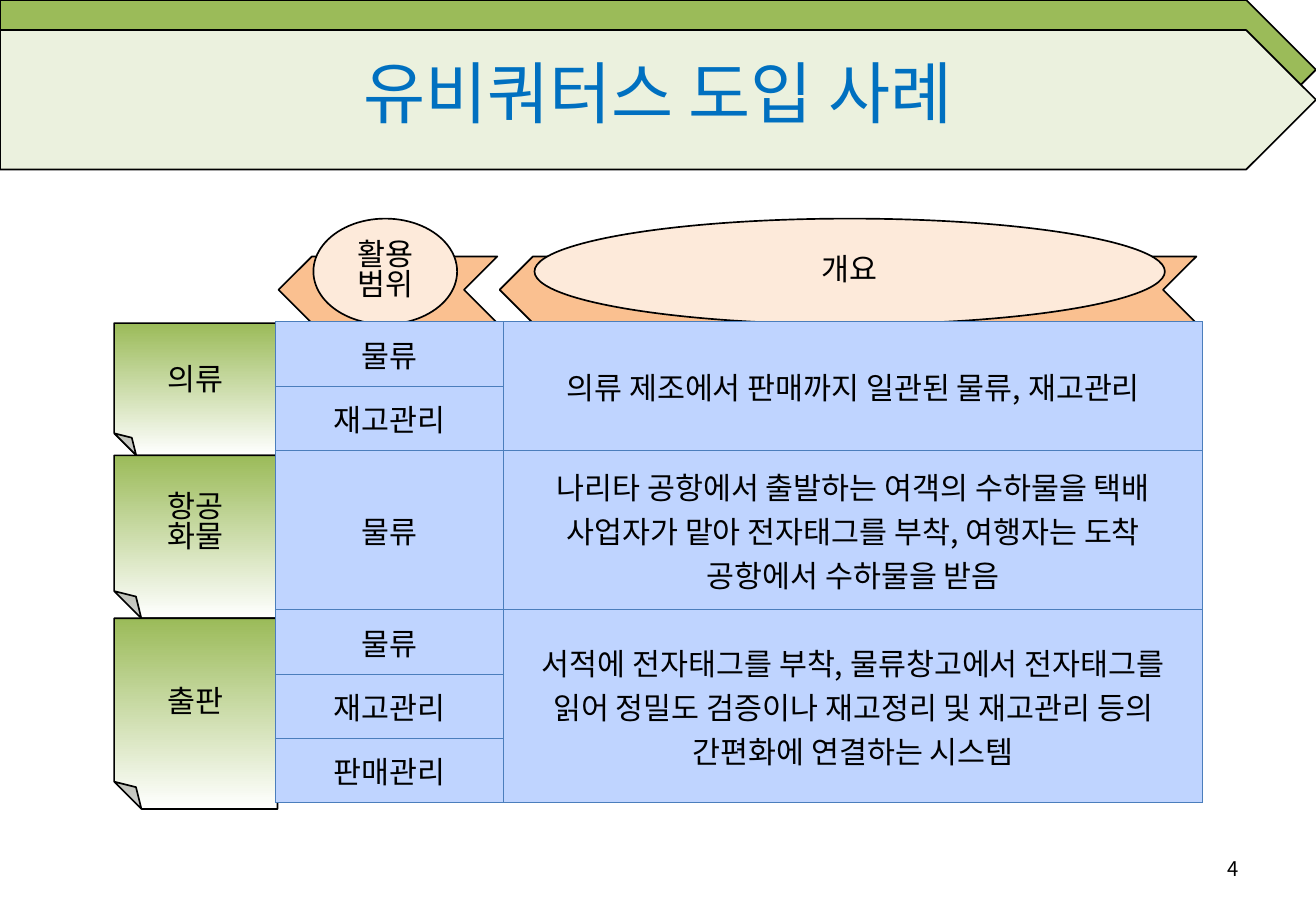
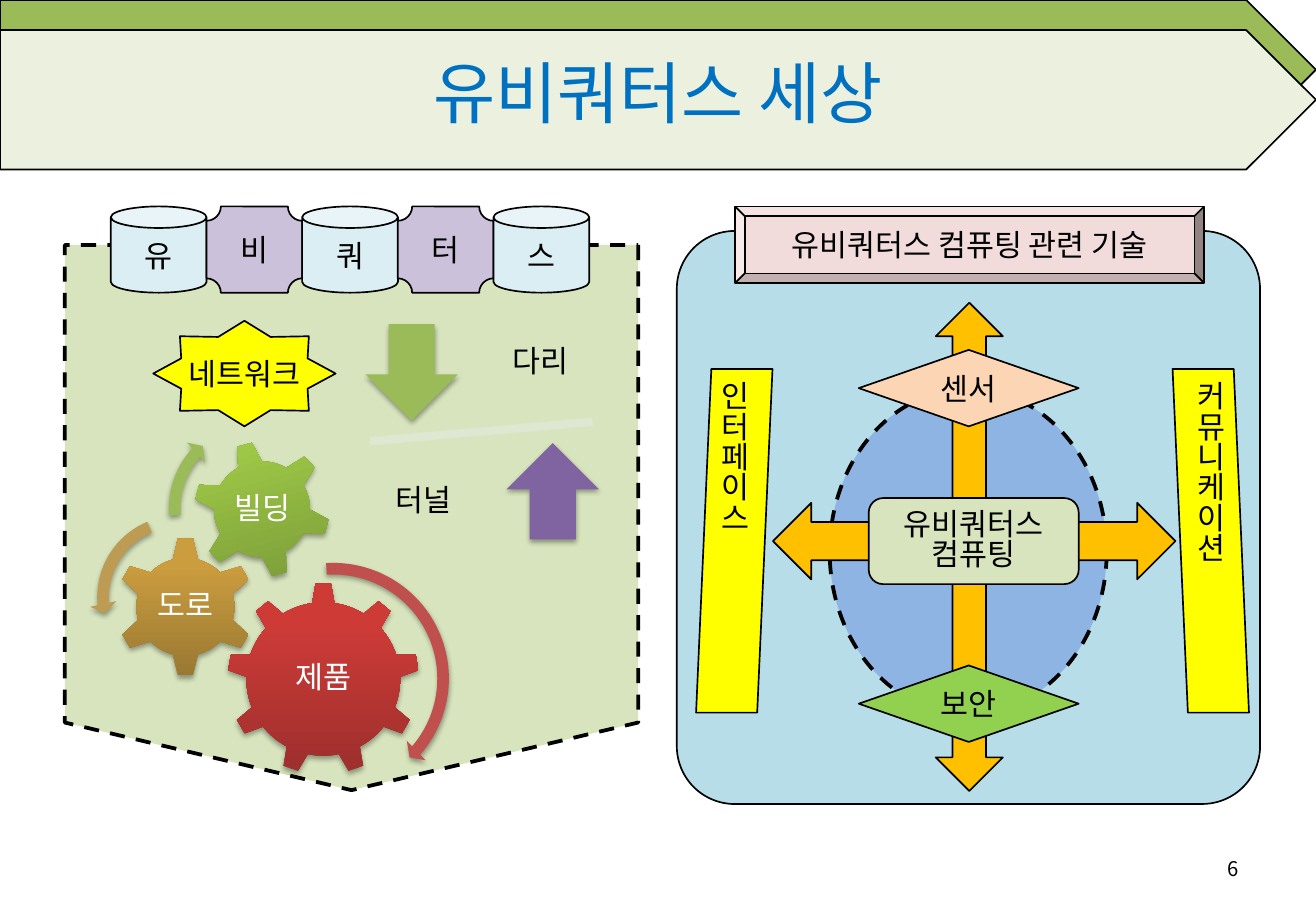
from lxml import etree
from pptx import Presentation
from pptx.dml.color import RGBColor
from pptx.enum.dml import MSO_LINE
from pptx.enum.shapes import MSO_SHAPE as S
from pptx.enum.text import MSO_ANCHOR, PP_ALIGN
from pptx.oxml import parse_xml
from pptx.oxml.ns import qn
from pptx.util import Inches, Pt

PLATE, CHEVRON, OVAL, FOLD = S.PENTAGON, S.CHEVRON, S.OVAL, S.FOLDED_CORNER
CAN, PLAQUE, STAR, MINUS = S.CAN, S.PLAQUE, S.STAR_8_POINT, S.MATH_MINUS
GEAR6, GEAR9 = S.GEAR_6, S.GEAR_9
CURVE, BACK = S.CIRCULAR_ARROW, S.LEFT_CIRCULAR_ARROW
DOWN, UP = S.DOWN_ARROW, S.UP_ARROW
TALL, WIDE = S.UP_DOWN_ARROW, S.LEFT_RIGHT_ARROW
ROUND, BEVEL, SLANT, GEM = S.ROUNDED_RECTANGLE, S.BEVEL, S.FLOWCHART_DATA, S.DIAMOND
DASH = MSO_LINE.DASH
MIDDLE = MSO_ANCHOR.MIDDLE
CENTER, RIGHT = PP_ALIGN.CENTER, PP_ALIGN.RIGHT

FONT = "Noto Sans CJK KR"
WIDTH, HEIGHT = 10.83, 7.5
PAGE = (0, 0, WIDTH, HEIGHT)
TIGHT = 0.82
NS = 'xmlns:a="http://schemas.openxmlformats.org/drawingml/2006/main"'
COLORS = {
    "black": "000000", "white": "FFFFFF", "title": "0070C0",
    "green": "9BBB59", "pale": "EBF1DE", "sage": "D7E4BD",
    "peach": "FAC090", "cream": "FDEADA", "cell": "BFD4FF", "rule": "4B7EBC",
    "ice": "DBEEF4", "lilac": "CCC1DA", "yellow": "FFFF00", "mist": "DEE7D1",
    "red": "C0504D", "tan": "BD9B53", "purple": "8064A2",
    "redlow": "9C2F2D", "redtop": "CE3B37", "tanlow": "997832", "tantop": "CB9D3F",
    "leaflow": "779737", "leaftop": "9DC746", "aqua": "B7DEE8", "rose": "F2DCDB",
    "blue": "8EB4E3", "gold": "FFC000", "skin": "FCD5B5", "lime": "92D050",
}


def rgb(name):
    """Return the named colour."""
    return RGBColor.from_string(COLORS[name])


def place(box, part):
    """Turn percent shares of a box into lengths."""
    x, y, w, h = box
    a, b, c, d = part
    return [Inches(v) for v in (x + w * a / 100, y + h * b / 100,
                                w * c / 100, h * d / 100)]


def write(frame, text, size=18, color="black", align=CENTER, space=None):
    """Fill a text frame, one paragraph a line."""
    frame.vertical_anchor = MIDDLE
    for i, line in enumerate(text.split("\n")):
        para = frame.add_paragraph() if i else frame.paragraphs[0]
        para.alignment = align
        if space:
            para.line_spacing = space
        run = para.add_run()
        run.text = line
        run.font.name, run.font.size = FONT, Pt(size)
        run.font.color.rgb = rgb(color)
        east = etree.SubElement(run.font._element, qn("a:ea"))
        east.set("typeface", FONT)


def label(shapes, box, part, text, wrap=False, **style):
    """Add a text box."""
    item = shapes.add_textbox(*place(box, part))
    item.text_frame.word_wrap = wrap
    write(item.text_frame, text, **style)


def draw(shapes, box, part, kind, fill, text="", line=1, dash=False, adj=(),
         turn=0, flip=False, wrap=False, glow=False, upright=False, space=None):
    """Add a preset shape; a fill pair is (start, end, angle, end position)."""
    item = shapes.add_shape(kind, *place(box, part))
    item.shadow.inherit = False
    item.rotation = turn
    for i, value in enumerate(adj):
        item.adjustments[i] = value
    if isinstance(fill, str):
        item.fill.solid()
        item.fill.fore_color.rgb = rgb(fill)
    else:
        first, last, angle, stop = fill
        item.fill.gradient()
        item.fill.gradient_angle = angle
        for mark, name, at in zip(item.fill.gradient_stops, (first, last), (0, stop)):
            mark.color.rgb, mark.position = rgb(name), at
    if line:
        item.line.color.rgb, item.line.width = rgb("black"), Pt(line)
        if dash:
            item.line.dash_style = DASH
    else:
        item.line.fill.background()
    props = item.element.spPr
    if flip:
        props.xfrm.set("flipH", "1")
    if glow:
        props.find(qn("a:effectLst")).append(parse_xml(
            f'<a:outerShdw {NS} blurRad="{Pt(3.1)}" dist="{Pt(1.8)}" dir="5400000" '
            'rotWithShape="0"><a:srgbClr val="000000"><a:alpha val="35000"/>'
            '</a:srgbClr></a:outerShdw>'))
    if text:
        item.text_frame.word_wrap = wrap
        write(item.text_frame, text, space=space)
        if upright:
            item.text_frame._txBody.bodyPr.set("vert", "eaVert")
    return item


def brand(layout, slide):
    """Give the layout its title place and arrow bands."""
    title = layout.placeholders[0]
    title.left, title.top, title.width, title.height = place(PAGE, (5, 1.7, 90, 16.7))
    for i, (top, fill) in enumerate(((0, "green"), (3.3, "pale"))):
        band = draw(slide.shapes, PAGE, (0, top, 100, 15.3), PLATE, fill).element
        band.nvSpPr.cNvPr.set("id", str(90 + i))
        layout.shapes.element.insert(2 + i, band)


def head(slide, title, number):
    """Write the title and the page number."""
    write(slide.shapes.title.text_frame, title, 40, "title")
    label(slide.shapes, PAGE, (71.7, 92.7, 23.3, 5.3), number, True,
          size=12, align=RIGHT)


def edge(cell):
    """Rule all four sides of a cell."""
    props = cell._tc.get_or_add_tcPr()
    for side in ("lnL", "lnR", "lnT", "lnB"):
        props.append(parse_xml(
            f'<a:{side} {NS} w="{Pt(0.75)}"><a:solidFill>'
            f'<a:srgbClr val="{COLORS["rule"]}"/></a:solidFill></a:{side}>'))


def grid(shapes, box, part, groups):
    """Add the table of uses, one merged summary for each group."""
    count = sum(len(uses) for uses, _ in groups)
    x, y, w, h = place(box, part)
    table = shapes.add_table(count, 2, x, y, w, h).table
    table.first_row = table.horz_banding = False
    for col, width in zip(table.columns, (1.88, 5.75)):
        col.width = Inches(width)
    for row in table.rows:
        row.height = Inches(0.53)
    for cell in table.iter_cells():
        edge(cell)
        cell.fill.solid()
        cell.fill.fore_color.rgb = rgb("cell")
        cell.vertical_anchor = MIDDLE
    top = 0
    for uses, note in groups:
        end = top + len(uses) - 1
        if end > top:
            table.cell(top, 1).merge(table.cell(end, 1))
        else:
            table.rows[top].height = Inches(1.31)
        write(table.cell(top, 1).text_frame, note)
        for i, use in enumerate(uses):
            write(table.cell(top + i, 0).text_frame, use)
        top = end + 1


def cases(shapes, box):
    """Draw the case chart: heads, row tabs and table."""
    for text, x, w, left, width in (("활용범위", 15.1, 20.1, 18.3, 13.2),
                                    ("개요", 35.4, 64, 38.6, 57.9)):
        draw(shapes, box, (x, 6.4, w, 11.3), CHEVRON, "peach", flip=True)
        draw(shapes, box, (left, 0, width, 17.9), OVAL, "cream", text,
             wrap=True, space=TIGHT)
    y = 17.7
    for text, h in (("의류", 22.4), ("항공\n화물", 27.6), ("출판", 32.3)):
        draw(shapes, box, (0, y, 15, h), FOLD, ("green", "white", 270, 1), text,
             flip=True, wrap=True, space=TIGHT if "\n" in text else None)
        y += h
    grid(shapes, box, (14.8, 17.5, 85.2, 81.7), (
        (("물류", "재고관리"), "의류 제조에서 판매까지 일관된 물류, 재고관리"),
        (("물류",), "나리타 공항에서 출발하는 여객의 수하물을 택배 사업자가 맡아 "
                  "전자태그를 부착, 여행자는 도착 공항에서 수하물을 받음"),
        (("물류", "재고관리", "판매관리"),
         "서적에 전자태그를 부착, 물류창고에서 전자태그를 읽어 정밀도 검증이나 "
         "재고정리 및 재고관리 등의 간편화에 연결하는 시스템")))


def gears(shapes, box):
    """Draw the three gears and their turning arrows."""
    for text, kind, tone, turn, part in (
            ("제품", GEAR9, "red", 0, (28.4, 64.6, 33.5, 32.9)),
            ("도로", GEAR6, "tan", 0, (8.9, 56.7, 24.4, 24)),
            ("빌딩", GEAR6, "leaf", 345, (22.5, 40.2, 23.9, 23.5))):
        draw(shapes, box, part, kind, (tone + "low", tone + "top", 90, 0.8),
             line=0, turn=turn, glow=True)
        label(shapes, box, part, text, color="white", space=0.9)
    for kind, fill, part, adj in (
            (CURVE, "red", (25.4, 59.8, 43, 42.3), (0.047, 2.99, 24.617, 159.84, 0.055)),
            (BACK, "tan", (4.4, 51.7, 31.1, 30.6), (0.065, 4.3, 104.891, 148.378, 0.075)),
            (CURVE, "green", (16.9, 35.2, 33.7, 33.1),
             (0.06, 3.941, 133.138, 105.082, 0.07))):
        draw(shapes, box, part, kind, fill, line=0, adj=adj, glow=True)


def scale(shapes, box):
    """Draw the bridge and tunnel balance."""
    draw(shapes, box, (46.2, 35.6, 53, 6), MINUS, "mist", line=0, turn=355)
    for text, kind, fill, x, y, left, top in (
            ("다리", DOWN, "green", 52.5, 20.2, 74.4, 18.1),
            ("터널", UP, "purple", 77.1, 40.6, 54, 41.9)):
        draw(shapes, box, (x, y, 16.1, 16.5), kind, fill, line=0, glow=True)
        label(shapes, box, (left, top, 17.2, 17.3), text, space=0.9)


def world(shapes, box):
    """Draw the left panel."""
    draw(shapes, box, (2.5, 4.2, 95.1, 98.3), PLATE, "sage", line=2.25,
         dash=True, adj=(0.124,), turn=90)
    for i, text in enumerate("유비쿼터스"):
        kind, fill = ((CAN, "ice"), (PLAQUE, "lilac"))[i % 2]
        draw(shapes, box, (8.1 + 16.68 * i, 0, 16.7, 14.8), kind, fill, text)
    gears(shapes, box)
    scale(shapes, box)
    draw(shapes, box, (15.5, 19.6, 31.8, 18.1), STAR, "yellow", "네트워크")


def tech(shapes, box):
    """Draw the right panel."""
    draw(shapes, box, (0, 4.1, 100, 95.9), ROUND, "aqua", adj=(0.101,))
    draw(shapes, box, (10, 0, 80.4, 12.8), BEVEL, "rose", "유비쿼터스 컴퓨팅 관련 기술")
    draw(shapes, box, (26.2, 30.5, 47.5, 54.5), OVAL, "blue", line=2.25, dash=True)
    draw(shapes, box, (44.4, 16.1, 11.5, 81.7), TALL, "gold")
    draw(shapes, box, (16.5, 49.6, 69, 12.8), WIDE, "gold")
    for text, x, flip in (("인터페이스", 3.3, False), ("커뮤니케이션", 85, True)):
        draw(shapes, box, (x, 27.2, 13.1, 57.5), SLANT, "yellow", text,
             flip=flip, upright=True)
    draw(shapes, box, (32.9, 48.8, 36, 14.4), ROUND, "sage", "유비쿼터스\n컴퓨팅",
         space=TIGHT)
    for text, y, fill in (("센서", 24, "skin"), ("보안", 76.8, "lime")):
        draw(shapes, box, (31.2, y, 37.7, 12.8), GEM, fill, text)


def main():
    """Build the deck."""
    prs = Presentation()
    prs.slide_width, prs.slide_height = Inches(WIDTH), Inches(HEIGHT)
    layout = prs.slide_layouts[5]
    first, second = (prs.slides.add_slide(layout) for _ in range(2))
    brand(layout, first)
    head(first, "유비쿼터스 도입 사례", "4")
    cases(first.shapes, (0.94, 1.8, 8.96, 4.86))
    head(second, "유비쿼터스 세상", "6")
    for panel, box in ((world, (0.53, 1.7, 4.72, 4.8)), (tech, (5.57, 1.7, 4.8, 4.92))):
        panel(second.shapes.add_group_shape().shapes, box)
    prs.save("out.pptx")


if __name__ == "__main__":
    main()
